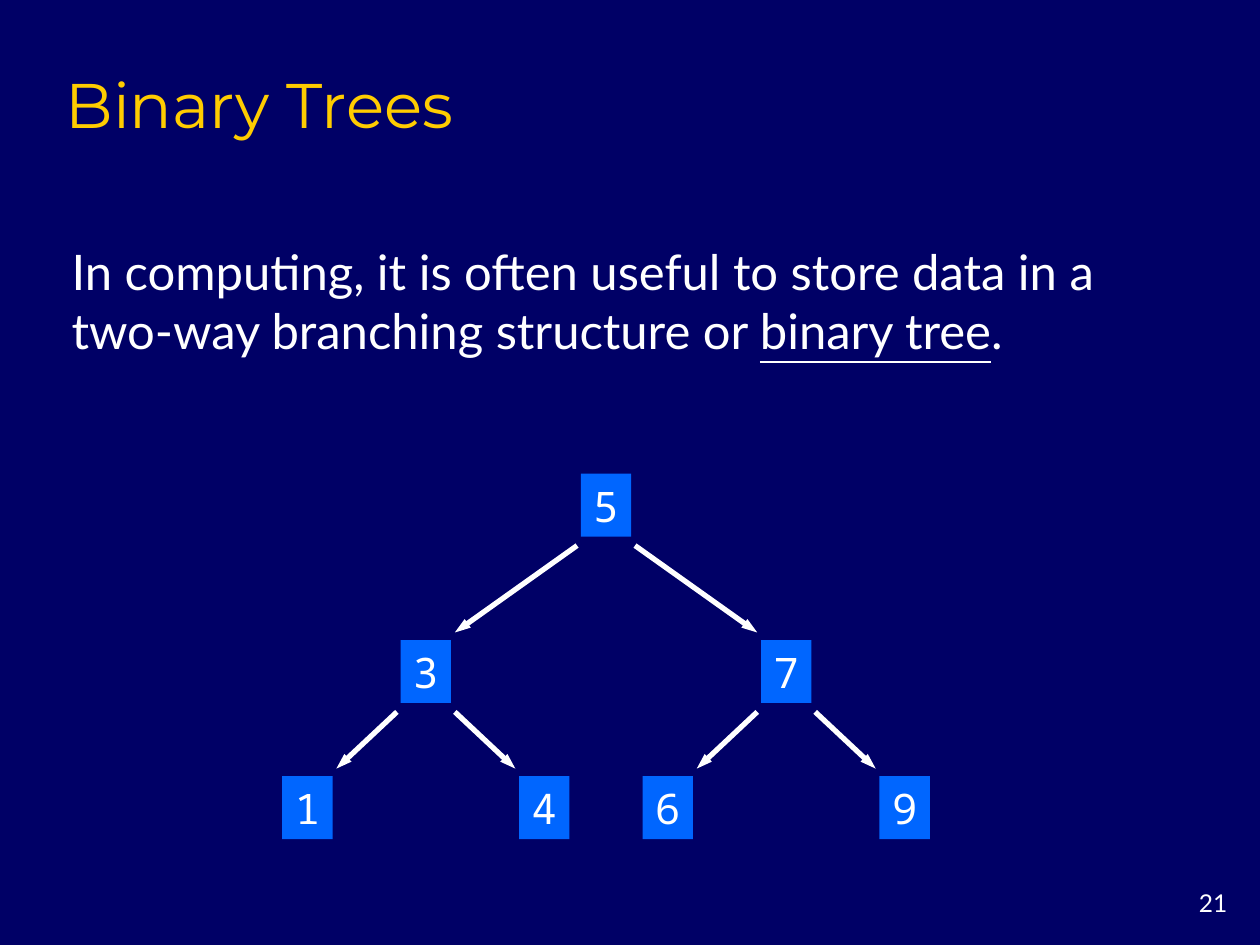
from dataclasses import dataclass

from lxml import etree
from pptx import Presentation
from pptx import util as u
from pptx.dml.color import RGBColor
from pptx.enum import shapes, text
from pptx.oxml import ns

COLORS = {"background": "000066", "title": "FFCC00", "text": "FFFFFF", "node": "0066FF"}
HEADING, BODY, MONO = "Montserrat", "Lato", "Noto Sans Mono"
WIDTH, HEIGHT = u.Inches(10), u.Inches(7.5)
COLUMNS, ROWS = 100, 75

NODE_WIDTH, NODE_HEIGHT = 4, 5
LEVEL_ROWS = (37.6, 50.8, 61.6)
CHILD_OFFSETS = (14.3, 9.4)
ARROW_SIDE, ARROW_START, ARROW_END = 2.3, 0.7, 0.6


@dataclass
class Node:
    value: int
    children: tuple["Node", ...] = ()


TREE = Node(5, (Node(3, (Node(1), Node(4))), Node(7, (Node(6), Node(9)))))


def color(name: str) -> RGBColor:
    return RGBColor.from_string(COLORS[name])


def col(count: float) -> int:
    return round(WIDTH * count / COLUMNS)


def row(count: float) -> int:
    return round(HEIGHT * count / ROWS)


def area(left: float, top: float, width: float, height: float) -> tuple[int, ...]:
    return col(left), row(top), col(width), row(height)


def write(box, *parts: str, font: str, size: float, ink: str = "text",
          align=text.PP_ALIGN.LEFT, anchor=text.MSO_ANCHOR.TOP,
          wrap: bool = True, underlined: str = "") -> None:
    """Fill a shape with one paragraph, underlining the part that matches."""
    frame = box.text_frame
    frame.word_wrap = wrap
    frame.auto_size = text.MSO_AUTO_SIZE.NONE
    frame.vertical_anchor = anchor
    para = frame.paragraphs[0]
    para.alignment = align
    for part in parts:
        span = para.add_run()
        span.text = part
        span.font.name = font
        span.font.size = u.Pt(size)
        span.font.color.rgb = color(ink)
        if part == underlined:
            span.font.underline = True


def draw_node(page, value: int, center: float, top: float) -> None:
    box = page.shapes.add_shape(
        shapes.MSO_SHAPE.RECTANGLE,
        *area(center - NODE_WIDTH / 2, top, NODE_WIDTH, NODE_HEIGHT))
    box.shadow.inherit = False
    box.fill.solid()
    box.fill.fore_color.rgb = color("node")
    box.line.fill.background()
    write(box, str(value), font=MONO, size=24, wrap=False,
          align=text.PP_ALIGN.CENTER, anchor=text.MSO_ANCHOR.MIDDLE)


def draw_arrow(page, start: tuple[float, float], end: tuple[float, float]) -> None:
    arrow = page.shapes.add_connector(
        shapes.MSO_CONNECTOR.STRAIGHT,
        col(start[0]), row(start[1]), col(end[0]), row(end[1]))
    arrow.line.color.rgb = color("text")
    arrow.line.width = u.Pt(3)
    etree.SubElement(arrow.line._get_or_add_ln(), ns.qn("a:tailEnd"),
                     type="triangle", w="sm", len="med")
    etree.SubElement(arrow._element.spPr, ns.qn("a:effectLst"))


def draw_tree(page, node: Node, center: float, level: int = 0) -> None:
    """Draw a node, then its children on the next level with arrows to them."""
    top = LEVEL_ROWS[level]
    draw_node(page, node.value, center, top)
    for child, side in zip(node.children, (-1, 1)):
        child_center = center + side * CHILD_OFFSETS[level]
        draw_arrow(page,
                   (center + side * ARROW_SIDE, top + NODE_HEIGHT + ARROW_START),
                   (child_center - side * ARROW_SIDE, LEVEL_ROWS[level + 1] - ARROW_END))
        draw_tree(page, child, child_center, level + 1)


def main() -> None:
    deck = Presentation()
    deck.slide_width, deck.slide_height = WIDTH, HEIGHT
    page = deck.slides.add_slide(deck.slide_layouts[5])
    page.background.fill.solid()
    page.background.fill.fore_color.rgb = color("background")

    title = page.shapes.title
    title.left, title.top, title.width, title.height = area(4.2, 4.2, 85, 7.5)
    write(title, "Binary Trees", font=HEADING, size=36, ink="title",
          anchor=text.MSO_ANCHOR.BOTTOM)

    intro = page.shapes.add_textbox(*area(4.7, 18.7, 89.6, 10.3))
    write(intro,
          "In computing, it is often useful to store data in a "
          "two-way branching structure or ",
          "binary tree", ".", font=BODY, size=28,
          anchor=text.MSO_ANCHOR.MIDDLE, underlined="binary tree")

    draw_tree(page, TREE, center=48.1)

    number = page.shapes.add_textbox(*area(91.7, 70, 6.7, 3.3))
    write(number, "21", font=BODY, size=14, align=text.PP_ALIGN.RIGHT)

    deck.save("out.pptx")


if __name__ == "__main__":
    main()
